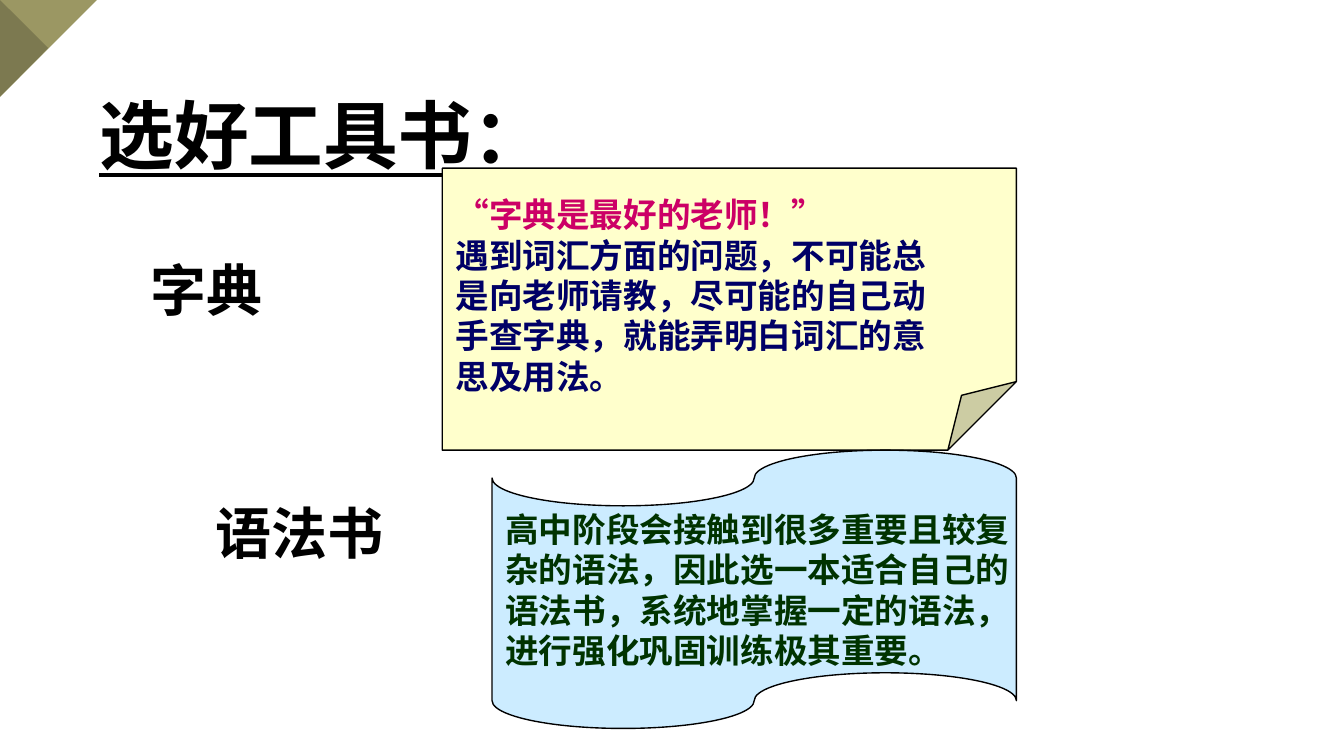
"""Build a slide that recommends a dictionary and a grammar book."""
from lxml.etree import SubElement
from pptx import Presentation
from pptx.dml.color import RGBColor as RGB
from pptx.enum.shapes import MSO_SHAPE as Kind
from pptx.enum.text import MSO_ANCHOR as Anchor, MSO_AUTO_SIZE as Fit, PP_ALIGN as Align
from pptx.oxml.ns import qn
from pptx.util import Cm, Pt

FACE = "Noto Sans CJK SC"


def paint(part, tone):
    part.solid()
    part.fore_color.rgb = RGB.from_string(tone)


def write(frame, lines, tones, form, look):
    for key, val in form.items():
        setattr(frame, key, val)
    frame.text = "\n".join(lines)
    for para, tone in zip(frame.paragraphs, tones):
        para.alignment = Align.LEFT
        font = para.runs[0].font
        for key, val in look.items():
            setattr(font, key, val)
        paint(font.fill, tone)
        SubElement(font._element, qn("a:ea"), typeface=FACE)


deck = Presentation()
deck.slide_width, deck.slide_height = Cm(25.4), Cm(14.29)
slide = deck.slides.add_slide(deck.slide_layouts[1])
shapes = slide.shapes
title, body = slide.placeholders

fold = shapes.add_shape(Kind.RIGHT_TRIANGLE, 0, 0, Cm(1.83), Cm(1.83))
fold.rotation = 90
pen = shapes.build_freeform(0, 0)
pen.add_line_segments([(Cm(0.91), Cm(0.91)), (0, Cm(1.83))])
shade = pen.convert_to_shape()
for part, tone in ((fold, "9B9763"), (shade, "7C7950")):
    part.shadow.inherit = False
    part.line.fill.background()
    paint(part.fill, tone)

heads = (
    (title, (2.67, 4.39, 11.23, 6.91), Anchor.MIDDLE, 0.1, ["字典", "语法书"],
     {"size": Pt(30), "bold": True, "name": FACE}),
    (body, (1.7, 1.52, 20.6, 11.25), Anchor.TOP, 0.36, ["选好工具书："],
     {"size": Pt(40), "bold": True, "underline": True, "name": FACE}),
)
for holder, box, anchor, top, lines, look in heads:
    holder.left, holder.top, holder.width, holder.height = map(Cm, box)
    frame = holder.text_frame
    form = {"word_wrap": True, "auto_size": Fit.NONE, "vertical_anchor": anchor,
            "margin_left": Cm(0.18), "margin_right": Cm(0.18),
            "margin_top": Cm(top), "margin_bottom": Cm(0.1)}
    write(frame, lines, ["000000"] * len(lines), form, look)
    for para in frame.paragraphs:
        props = para._p.get_or_add_pPr()
        props.set("marL", "0")
        props.set("indent", "0")
        SubElement(props, qn("a:buNone"))
        para.line_spacing = 0.9
        para.space_before = Pt(0)

last = title.text_frame.paragraphs[1]
last.space_before = Pt(98)
last._p.pPr.set("marL", str(Cm(1.22)))

notes = (
    (Kind.FOLDED_CORNER, (8.36, 3.18, 10.85, 5.33), "FFFFCC", 0.89, FACE,
     ["“字典是最好的老师！”", "遇到词汇方面的问题，不可能总", "是向老师请教，尽可能的自己动",
      "手查字典，就能弄明白词汇的意", "思及用法。"],
     ["CC0066"] + ["000066"] * 4),
    (Kind.FLOWCHART_PUNCHED_TAPE, (9.3, 8.51, 9.91, 5.26), "CCECFF", 0.13, "Arial",
     ["高中阶段会接触到很多重要且较复", "杂的语法，因此选一本适合自己的",
      "语法书，系统地掌握一定的语法，", "进行强化巩固训练极其重要。"],
     ["003300"] * 4),
)
for kind, box, back, top, face, lines, tones in notes:
    note = shapes.add_shape(kind, *map(Cm, box))
    note.shadow.inherit = False
    paint(note.fill, back)
    paint(note.line.fill, "000000")
    note.line.width = Pt(0.75)
    if kind == Kind.FOLDED_CORNER:
        guides = note._element.spPr.prstGeom.get_or_add_avLst()
        SubElement(guides, qn("a:gd"), name="adj", fmla="val 24300")
    form = {"word_wrap": False, "vertical_anchor": Anchor.MIDDLE, "margin_top": Cm(top)}
    write(note.text_frame, lines, tones, form,
          {"size": Pt(18), "bold": True, "name": face})

deck.save("out.pptx")
